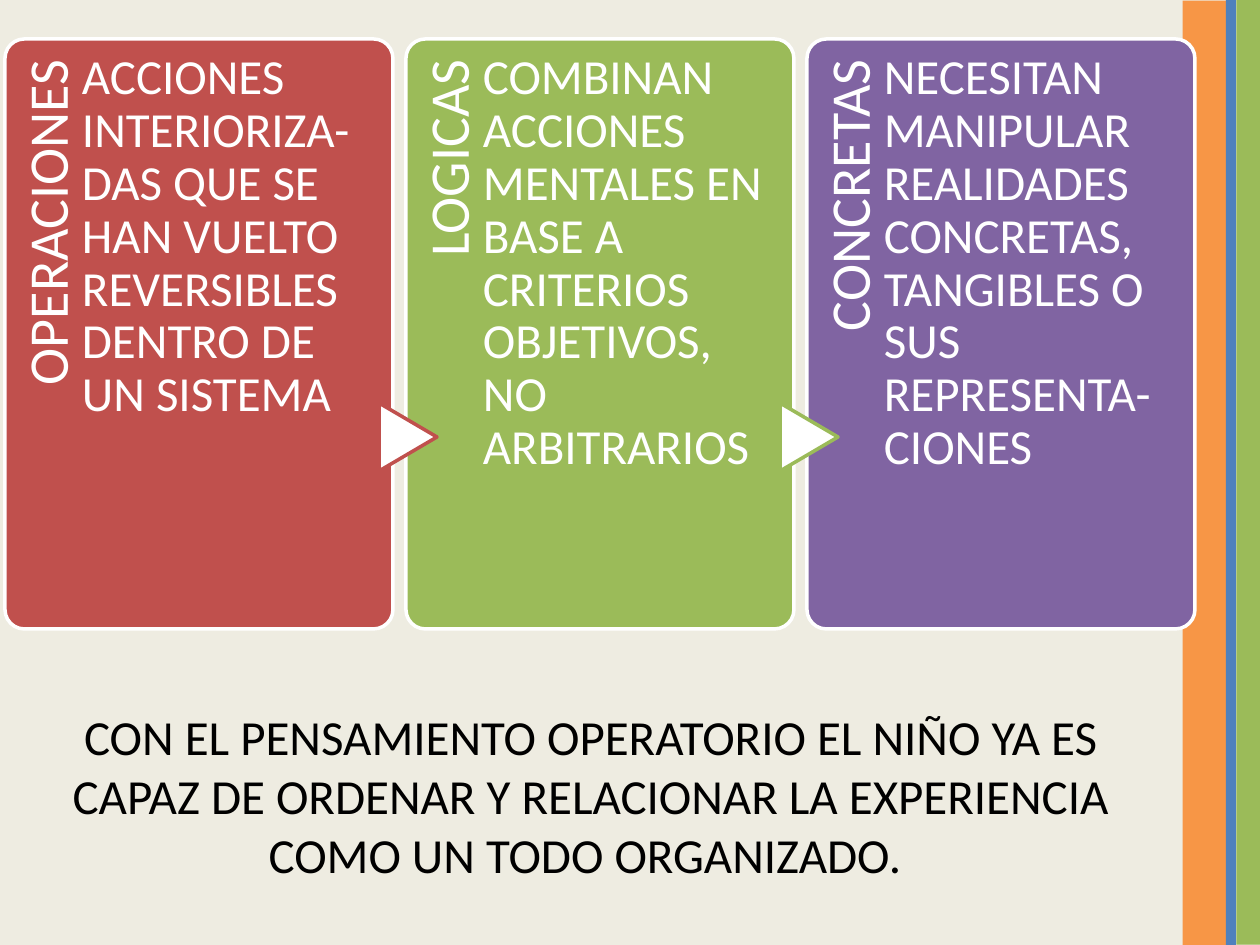
from pptx import Presentation
from pptx.dml.color import RGBColor
from pptx.enum.shapes import MSO_SHAPE as Shape
from pptx.enum.text import MSO_AUTO_SIZE as Fit, PP_ALIGN as Align
from pptx.util import Emu, Pt

PX = 914400 / 126
CREAM = RGBColor(0xEE, 0xEC, 0xE1)
WHITE = RGBColor(0xFF, 0xFF, 0xFF)
BLACK = RGBColor(0x00, 0x00, 0x00)
ORANGE = RGBColor(0xF7, 0x96, 0x46)
BLUE = RGBColor(0x4F, 0x81, 0xBD)
RED = RGBColor(0xC0, 0x50, 0x4D)
GREEN = RGBColor(0x9B, 0xBB, 0x59)
PURPLE = RGBColor(0x80, 0x64, 0xA2)

prs = Presentation()
prs.slide_width, prs.slide_height = Emu(9144000), Emu(6858000)
slide = prs.slides.add_slide(prs.slide_layouts[6])
slide.background.fill.solid()
slide.background.fill.fore_color.rgb = CREAM


def add_form(kind, box, fill, line=None, turn=0):
    form = slide.shapes.add_shape(kind, *[Emu(round(n * PX)) for n in box])
    form.shadow.inherit = False
    form.rotation = turn
    form.fill.solid()
    form.fill.fore_color.rgb = fill
    if line is None:
        form.line.fill.background()
    else:
        form.line.color.rgb = line
        form.line.width = Pt(2)
    return form


def add_text(text, box, size=28, color=WHITE, align=Align.LEFT, turn=0,
             pad=(0, 13, 0, 0), lead=0.9, fit=Fit.NONE):
    form = slide.shapes.add_textbox(*[Emu(round(n * PX)) for n in box])
    form.rotation = turn
    frame = form.text_frame
    frame.word_wrap = True
    frame.auto_size = fit
    (frame.margin_left, frame.margin_top, frame.margin_right,
     frame.margin_bottom) = [Emu(round(n * PX)) for n in pad]
    para = frame.paragraphs[0]
    para.alignment = align
    para.line_spacing = lead
    run = para.add_run()
    run.text = text
    run.font.name = "Calibri"
    run.font.size = Pt(size)
    run.font.color.rgb = color


# Stripes at the right edge
add_form(Shape.RECTANGLE, (732, 451, 945, 44), ORANGE, turn=270)
add_form(Shape.RECTANGLE, (776, 460, 945, 24), GREEN, turn=270)
add_form(Shape.RECTANGLE, (1226, 0, 10, 945), BLUE)

# Three cards, each joined to the one before by an arrow
cards = [
    ("OPERACIONES", RED, "ACCIONES INTERIORIZA-DAS QUE SE HAN VUELTO "
     "REVERSIBLES DENTRO DE UN SISTEMA"),
    ("LOGICAS", GREEN, "COMBINAN ACCIONES MENTALES EN BASE A CRITERIOS "
     "OBJETIVOS, NO ARBITRARIOS"),
    ("CONCRETAS", PURPLE, "NECESITAN MANIPULAR REALIDADES CONCRETAS, "
     "TANGIBLES O SUS REPRESENTA-CIONES"),
]
last = None
for i, (title, color, body) in enumerate(cards):
    left = 5 + 401 * i
    card = add_form(Shape.ROUNDED_RECTANGLE, (left, 39, 388, 590), color, WHITE)
    card.adjustments[0] = 0.05
    add_text(title, (left - 203, 242, 483, 78), size=32, align=Align.RIGHT,
             turn=270, pad=(0, 15, 20, 0))
    if last is not None:
        add_form(Shape.FLOWCHART_EXTRACT, (left - 32, 408, 68, 58), WHITE, last,
                 turn=90)
    add_text(body, (left + 77, 39, 289, 590))
    last = color

# Closing statement
add_text("CON EL PENSAMIENTO OPERATORIO EL NIÑO YA ES CAPAZ DE ORDENAR Y "
         "RELACIONAR LA EXPERIENCIA COMO UN TODO ORGANIZADO. ",
         (25, 701, 1131, 190), color=BLACK, align=Align.CENTER,
         pad=(13, 6, 13, 6), lead=1.0, fit=Fit.SHAPE_TO_FIT_TEXT)

prs.save("out.pptx")
